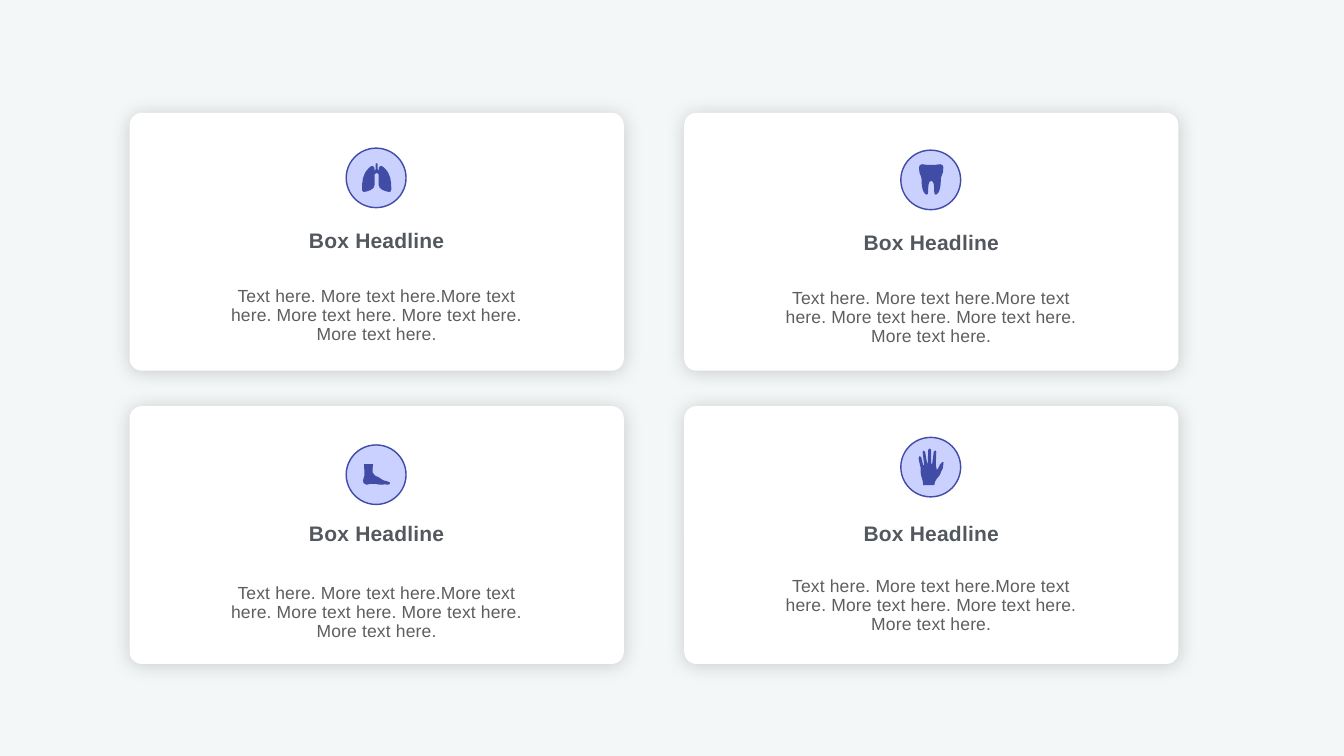
import pptx
import pptx.dml.color
import pptx.enum.shapes
import pptx.enum.text
import pptx.oxml.ns
import pptx.util
from lxml import etree

Pt = pptx.util.Pt
RGBColor = pptx.dml.color.RGBColor
MSO_SHAPE = pptx.enum.shapes.MSO_SHAPE
qn = pptx.oxml.ns.qn

BACKGROUND = RGBColor(0xF4, 0xF7, 0xF7)
WHITE = RGBColor(0xFF, 0xFF, 0xFF)
LAVENDER = RGBColor(0xCA, 0xD1, 0xFF)
INDIGO = RGBColor(0x41, 0x4C, 0xA7)
HEADLINE_GREY = RGBColor(0x53, 0x58, 0x5F)
BODY_GREY = RGBColor(0x5E, 0x5E, 0x5E)

CARD_WIDTH, CARD_HEIGHT = 706, 368.3
COLUMNS = (185.2, 977.5)
ROWS = (161.2, 580.2)
CIRCLE_WIDTH, CIRCLE_HEIGHT = 85.5, 85
ICON_UNIT = 0.72

HEADLINE = "Box Headline"
BODY = "Text here. More text here.More text here. More text here. More text here. More text here."

HALF_LUNGS = [
    (29, 0), (28, 0, 27, 1, 27, 1), (27, 12), (27, 14, 26, 15, 25, 16),
    (25, 15, 25, 14, 25, 13), (25, 4, 19, 3, 13, 10), (1, 22, 0, 35, 0, 52),
    (0, 55, 1, 57, 4, 57), (12, 56, 25, 52, 25, 43), (25, 40, 25, 30, 25, 22),
    (27, 21, 28, 20, 29, 19),
]
HALF_TOOTH = [
    (24, 1.5), (18, 1.5, 12, 1, 6, 0), (2, 0, 0, 3, 0, 6), (0, 25, 5, 18, 5, 34),
    (5, 39, 6, 49, 9, 55), (13, 62, 18, 63, 18, 54), (18, 45, 18, 33, 24, 33),
]
FOOT = [
    (2, 0), (2, 0, 3, 18, 3, 22), (2, 26, 0, 31, 0, 33), (0, 36, 1, 41, 7, 41),
    (14, 41, 15, 37, 22, 39), (29, 40, 32, 41, 37, 41), (40, 41, 43, 40, 44, 40),
    (45, 40, 47, 41, 49, 41), (53, 41, 55, 38, 53, 36), (51, 35, 50, 35, 50, 35),
    (50, 35, 50, 34, 47, 34), (45, 34, 42, 33, 40, 32), (37, 31, 35, 27, 24, 23),
    (19, 21, 18, 17, 20, 0),
]
HAND = [
    (23, 0), (21, 0, 20, 1, 20, 3), (20, 5, 19, 30, 19, 30), (18, 30),
    (18, 30, 14, 9, 14, 7), (14, 3, 8, 3, 9, 7), (9, 9, 12, 33, 12, 33), (10, 33),
    (10, 33, 7, 21, 6, 17), (5, 14, 0, 15, 1, 19), (1, 21, 3, 31, 5, 38),
    (4, 54, 8, 58, 9, 64), (10, 68, 10, 73, 10, 73), (32, 73),
    (32, 62, 42, 56, 44, 51), (44, 50, 47, 42, 49, 39), (49, 38, 49, 37, 49, 36),
    (50, 35, 50, 31, 50, 31), (51, 28, 51, 26, 48, 27), (44, 28, 42, 35, 42, 35),
    (39, 41), (37, 42), (35, 32), (35, 32, 36, 10, 36, 7), (37, 3, 32, 3, 31, 6),
    (31, 8, 28, 27, 28, 30), (26, 30), (26, 30, 26, 5, 26, 3), (26, 1, 24, 0, 23, 0),
]


def point_pairs(segment):
    return list(zip(segment[::2], segment[1::2]))


def mirrored(half):
    width = 2 * half[0][0]
    result = list(half)
    for index in range(len(half) - 1, 0, -1):
        controls = point_pairs(half[index])[-2::-1]
        target = point_pairs(half[index - 1])[-1]
        result.append(tuple(
            value for x, y in controls + [target] for value in (width - x, y)))
    return result


def style_shape(shape, fill):
    shape.shadow.inherit = False
    shape.fill.solid()
    shape.fill.fore_color.rgb = fill
    shape.line.fill.background()


def add_panel(group, left, top):
    panel = group.shapes.add_shape(
        MSO_SHAPE.ROUNDED_RECTANGLE, Pt(left), Pt(top), Pt(CARD_WIDTH), Pt(CARD_HEIGHT))
    panel.adjustments[0] = 0.047
    style_shape(panel, WHITE)
    effects = panel._element.spPr.find(qn("a:effectLst"))
    shadow = etree.SubElement(
        effects, qn("a:outerShdw"), blurRad=str(Pt(28)), dist=str(Pt(2)),
        dir="5400000", algn="ctr", rotWithShape="0")
    color = etree.SubElement(shadow, qn("a:srgbClr"), val="000000")
    etree.SubElement(color, qn("a:alpha"), val="17000")


def add_label(group, left, top, width, height, text, size, color, bold, spacing):
    box = group.shapes.add_textbox(Pt(left), Pt(top), Pt(width), Pt(height))
    frame = box.text_frame
    frame.word_wrap = True
    frame.vertical_anchor = pptx.enum.text.MSO_ANCHOR.MIDDLE
    frame.margin_left = frame.margin_right = Pt(6)
    frame.margin_top = frame.margin_bottom = Pt(6)
    paragraph = frame.paragraphs[0]
    paragraph.alignment = pptx.enum.text.PP_ALIGN.CENTER
    paragraph.line_spacing = 0.9
    run = paragraph.add_run()
    run.text = text
    run.font.name = "Arial"
    run.font.size = Pt(size)
    run.font.bold = bold
    run.font.color.rgb = color
    run._r.get_or_add_rPr().set("spc", str(spacing))


def add_icon(group, left, top, segments):
    outline = [
        [(Pt(left + x * ICON_UNIT), Pt(top + y * ICON_UNIT)) for x, y in point_pairs(segment)]
        for segment in segments]
    builder = group.shapes.build_freeform(*outline[0][0])
    builder.add_line_segments([points[-1] for points in outline[1:]], close=True)
    icon = builder.convert_to_shape()
    style_shape(icon, INDIGO)
    lines = list(icon._element.iter(qn("a:lnTo")))
    for line, points in zip(lines, outline[1:]):
        if len(points) == 3:
            curve = etree.Element(qn("a:cubicBezTo"))
            for x, y in points:
                etree.SubElement(
                    curve, qn("a:pt"), x=str(x - icon.left), y=str(y - icon.top))
            line.getparent().replace(line, curve)


def add_card(slide, left, top, icon, icon_left, icon_top, circle_top, headline_top, body_top):
    group = slide.shapes.add_group_shape()
    add_panel(group, left, top)
    add_label(group, left + 151, top + headline_top, 404, 62.6,
              HEADLINE, 30, HEADLINE_GREY, True, 30)
    add_label(group, left + 123.8, top + body_top, 458, 160.6,
              BODY, 25, BODY_GREY, False, 25)
    circle = group.shapes.add_shape(
        MSO_SHAPE.OVAL, Pt(left + 309.4), Pt(top + circle_top),
        Pt(CIRCLE_WIDTH), Pt(CIRCLE_HEIGHT))
    style_shape(circle, LAVENDER)
    circle.line.color.rgb = INDIGO
    circle.line.width = Pt(2)
    add_icon(group, left + icon_left, top + icon_top, icon)


def main():
    presentation = pptx.Presentation()
    presentation.slide_width = Pt(1920)
    presentation.slide_height = Pt(1080)
    slide = presentation.slides.add_slide(presentation.slide_layouts[6])
    slide.background.fill.solid()
    slide.background.fill.fore_color.rgb = BACKGROUND

    cards = [
        (mirrored(HALF_LUNGS), 332, 72, 50.4, 153.4, 210.2),
        (mirrored(HALF_TOOTH), 335.5, 73.4, 53.3, 156.2, 213.1),
        (FOOT, 333.4, 82.8, 55.4, 152.6, 215.3),
        (HAND, 334.1, 60.5, 44.6, 152.6, 204.5),
    ]
    for index, card in enumerate(cards):
        row, column = divmod(index, len(COLUMNS))
        add_card(slide, COLUMNS[column], ROWS[row], *card)
    presentation.save("out.pptx")


if __name__ == "__main__":
    main()
